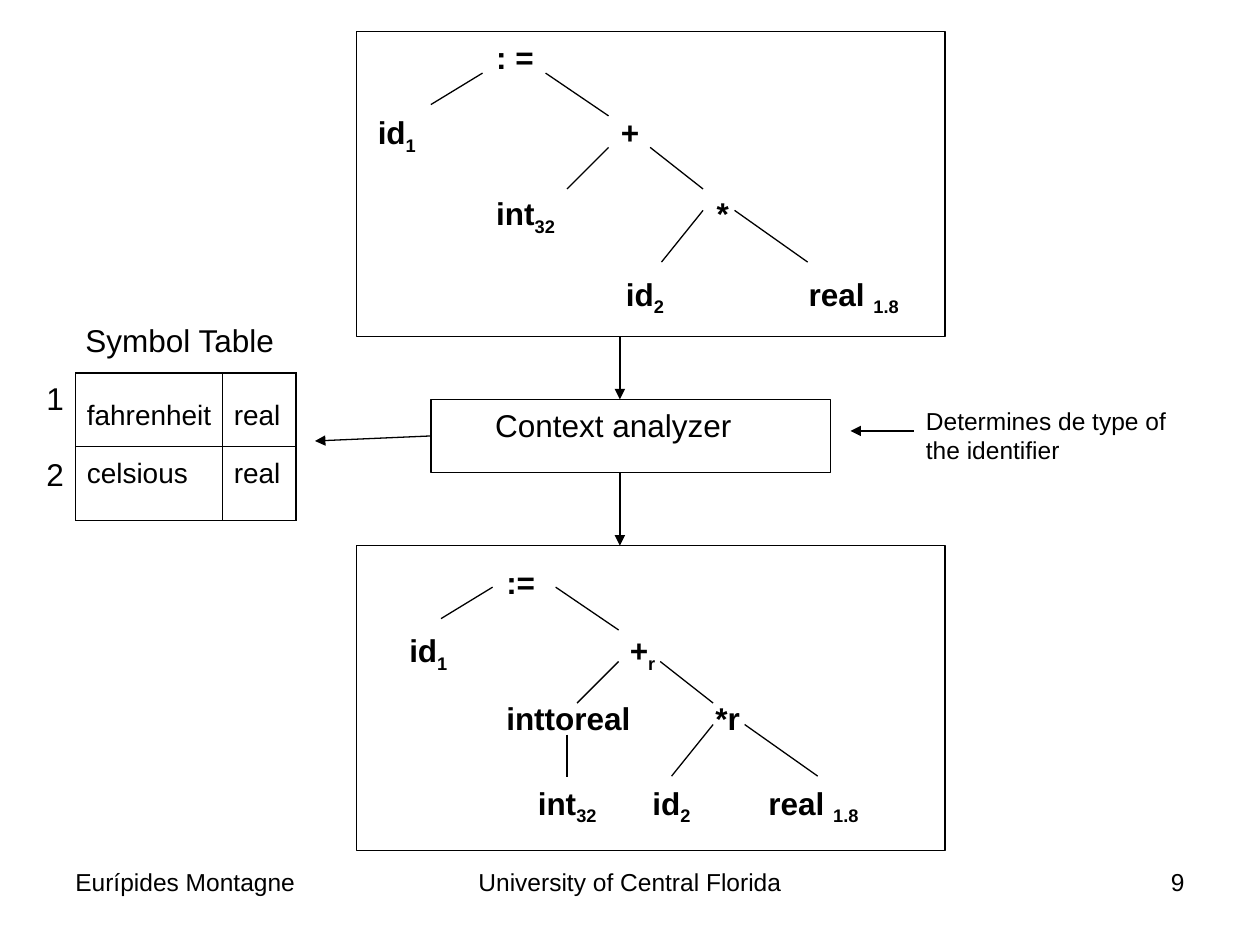
import pptx
import pptx.util
import pptx.dml.color
import pptx.enum.shapes
import pptx.enum.text
import pptx.oxml
import pptx.oxml.ns

Inches, Pt = pptx.util.Inches, pptx.util.Pt
ALIGN = pptx.enum.text.PP_ALIGN
HUES = {"ink": "000000", "page": "FFFFFF"}
FONT = "Arial"
EDGES = [
    (1, 0.33, 0.59, 0.58), (1.5, 0.33, 2, 0.67),
    (2, 0.92, 1.67, 1.25), (2.33, 0.92, 2.75, 1.25),
    (2.75, 1.42, 2.42, 1.83), (3, 1.42, 3.58, 1.83),
]
SOURCE = [
    (1.01, 0, ": =", ""), (0.07, 0.6, "id", "1"), (2, 0.6, "+", ""),
    (1.01, 1.24, "int", "32"), (2.76, 1.24, "*", ""),
    (2.04, 1.88, "id", "2"), (3.49, 1.88, "real ", "1.8"),
]
TYPED = [
    (1.09, 0.09, ":=", ""), (0.32, 0.63, "id", "1"), (2.07, 0.63, "+", "r"),
    (1.09, 1.17, "inttoreal", ""), (2.75, 1.17, "*r", ""),
    (1.34, 1.84, "int", "32"), (2.25, 1.84, "id", "2"),
    (3.17, 1.84, "real ", "1.8"),
]


def color(name):
    """Return the named colour."""
    return pptx.dml.color.RGBColor.from_string(HUES[name])


def write(par, text, size, bold=False, sub=False):
    """Add one run to a paragraph."""
    run = par.add_run()
    run.text = text
    run.font.name, run.font.size, run.font.bold = FONT, Pt(size), bold
    run.font.color.rgb = color("ink")
    if sub:
        run._r.get_or_add_rPr().set("baseline", "-25000")


def label(slide, box, lines, size, align=ALIGN.LEFT, wrap=False):
    """Add a text box with one paragraph per line."""
    frame = slide.shapes.add_textbox(*map(Inches, box)).text_frame
    frame.word_wrap = wrap
    for i, line in enumerate(lines):
        par = frame.add_paragraph() if i else frame.paragraphs[0]
        par.alignment = align
        write(par, line, size)


def frame_box(slide, box):
    """Add an outlined rectangle."""
    rect = slide.shapes.add_shape(
        pptx.enum.shapes.MSO_SHAPE.RECTANGLE, *map(Inches, box))
    rect.shadow.inherit = False
    rect.fill.background()
    rect.line.color.rgb = color("ink")
    rect.line.width = Pt(0.75)
    return rect


def link(slide, ends, arrow=False):
    """Add a straight line, with an arrowhead at its end if asked."""
    line = slide.shapes.add_connector(
        pptx.enum.shapes.MSO_CONNECTOR.STRAIGHT, *map(Inches, ends))
    line.line.color.rgb = color("ink")
    line.line.width = Pt(0.75)
    props = line._element.spPr
    if arrow:
        head = pptx.oxml.ns.qn("a:tailEnd")
        line.line._get_or_add_ln().makeelement(head)
        node = pptx.oxml.parse_xml(
            f'<a:tailEnd {pptx.oxml.ns.nsdecls("a")} type="triangle"/>')
        line.line._get_or_add_ln().append(node)
    props.append(pptx.oxml.parse_xml(
        f'<a:effectLst {pptx.oxml.ns.nsdecls("a")}/>'))
    return line


def tree(slide, box, nodes, shift=0):
    """Draw a framed syntax tree with its edges moved right by shift."""
    x, y, w, h = box
    frame_box(slide, box)
    for x1, y1, x2, y2 in EDGES:
        link(slide, (x + x1 + shift, y + y1, x + x2 + shift, y + y2))
    for left, top, text, sub in nodes:
        area = slide.shapes.add_textbox(
            Inches(x + left), Inches(y + top), Inches(1.2), Inches(0.4))
        area.text_frame.word_wrap = False
        par = area.text_frame.paragraphs[0]
        par.alignment = ALIGN.LEFT
        write(par, text, 18, True)
        if sub:
            write(par, sub, 18, True, True)


def border(cell):
    """Give a cell thin lines on all four sides."""
    props = cell._tc.get_or_add_tcPr()
    for i, side in enumerate(("lnL", "lnR", "lnT", "lnB")):
        props.insert(i, pptx.oxml.parse_xml(
            f'<a:{side} {pptx.oxml.ns.nsdecls("a")} w="9525"><a:solidFill>'
            f'<a:srgbClr val="{HUES["ink"]}"/></a:solidFill></a:{side}>'))


def symbols(slide, box):
    """Draw the symbol table with its heading and row numbers."""
    x, y, w, h = box
    label(slide, (x - 0.02, y - 0.46, 1.73, 0.4), ["Symbol Table"], 18)
    grid = slide.shapes.add_table(2, 2, *map(Inches, box)).table
    grid.first_row = grid.horz_banding = False
    for col, part in zip(grid.columns, (2 / 3, 1 / 3)):
        col.width = Inches(w * part)
    rows = [("fahrenheit", "real", 0.22), ("celsious", "real", 0.09)]
    for i, (name, kind, gap) in enumerate(rows):
        grid.rows[i].height = Inches(h / 2)
        label(slide, (x - 0.33, y + 0.6 * i, 0.34, 0.4), [str(i + 1)], 18)
        for j, text in enumerate((name, kind)):
            cell = grid.cell(i, j)
            cell.fill.background()
            cell.margin_left = Inches(0.09)
            cell.margin_right = cell.margin_bottom = Inches(0)
            cell.margin_top = Inches(gap)
            write(cell.text_frame.paragraphs[0], text, 16)
            border(cell)


def stage(slide, box):
    """Draw the analyzer box with its arrows and note."""
    x, y, w, h = box
    rect = frame_box(slide, box)
    text = rect.text_frame
    text.margin_left, text.margin_top = Inches(0.51), Inches(0.05)
    text.vertical_anchor = pptx.enum.text.MSO_ANCHOR.TOP
    text.paragraphs[0].alignment = ALIGN.LEFT
    write(text.paragraphs[0], "Context analyzer", 18)
    link(slide, (x + 1.5, y - 0.5, x + 1.5, y), True)
    link(slide, (x + 1.5, y + h, x + 1.5, y + h + 0.58), True)
    out = link(slide, (x, y + h / 2, x - 0.92, y + 0.33), True)
    out.begin_connect(rect, 1)
    link(slide, (x + 3.83, y + 0.25, x + 3.33, y + 0.25), True)
    label(slide, (x + 3.83, y, 2.15, 0.57),
          ["Determines de type of", "the identifier"], 14)


def footer(slide, box):
    """Place author, school and page number along the bottom."""
    x, y, w, h = box
    label(slide, (x, y, 2.33, h), ["Eurípides Montagne"], 14, wrap=True)
    label(slide, (x + (w - 3.17) / 2, y, 3.17, h),
          ["University of Central Florida"], 14, ALIGN.CENTER, True)
    label(slide, (x + w - 2.33, y, 2.33, h), ["9"], 14, ALIGN.RIGHT, True)


def main():
    """Build and save the slide."""
    deck = pptx.Presentation()
    deck.slide_width, deck.slide_height = Inches(10), Inches(7.5)
    slide = deck.slides.add_slide(deck.slide_layouts[6])
    slide.background.fill.solid()
    slide.background.fill.fore_color.rgb = color("page")
    tree(slide, (2.83, 0.25, 4.67, 2.42), SOURCE)
    symbols(slide, (0.6, 2.96, 1.75, 1.17))
    stage(slide, (3.42, 3.17, 3.17, 0.58))
    box = (2.83, 4.33, 4.67, 2.42)
    tree(slide, box, TYPED, 0.08)
    link(slide, (4.5, 5.83, 4.5, 6.17))
    footer(slide, (0.5, 6.83, 9, 0.52))
    deck.save("out.pptx")


if __name__ == "__main__":
    main()
